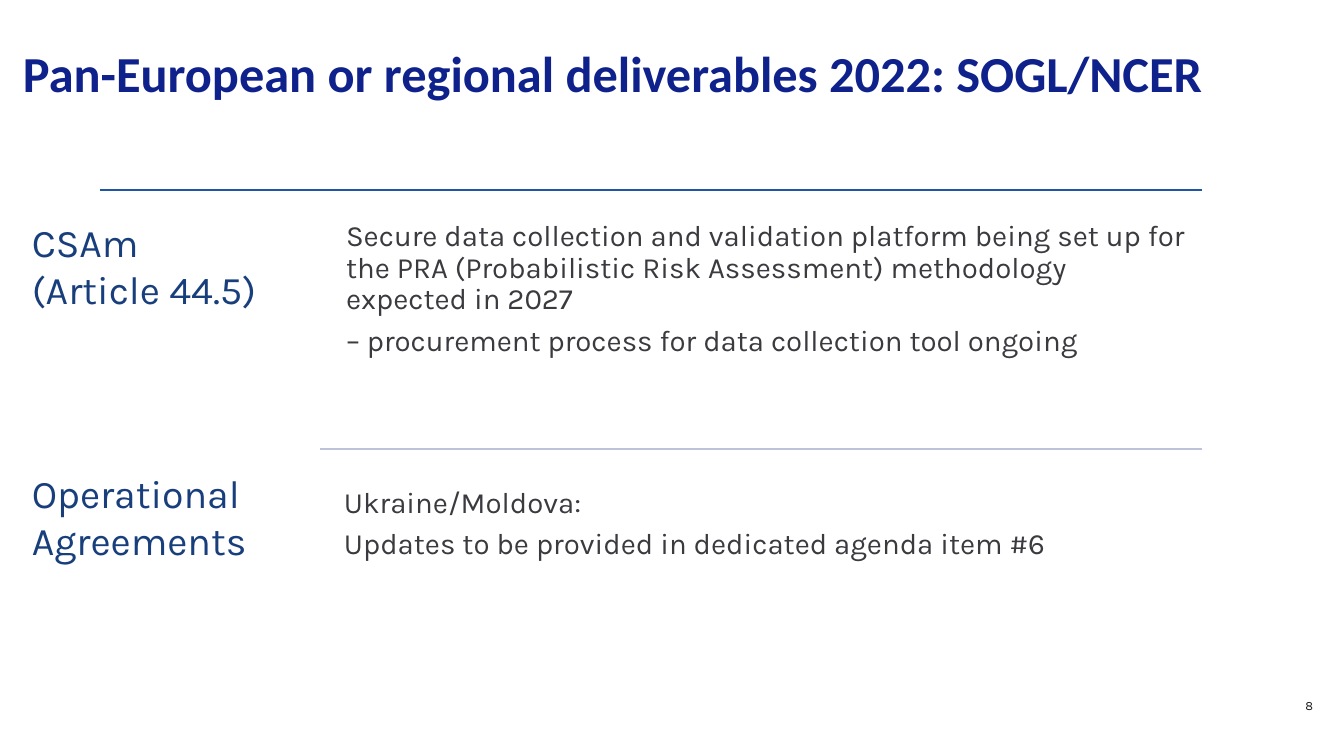
from lxml import etree
from pptx import Presentation, util as u
from pptx.dml.color import RGBColor
from pptx.enum import shapes, text
from pptx.oxml.ns import qn

PX = 914400 / 100.8
INK = {"title": "0F218B", "blue": "2054A5", "pale": "BDC3D8",
       "side": "183F7C", "body": "3A3A3F", "page": "1D1D20"}

deck = Presentation()
deck.slide_width, deck.slide_height = round(1344 * PX), round(756 * PX)
slide = deck.slides.add_slide(deck.slide_layouts[6])


def write(box, lines, size, ink, font="Karla", bold=False, pitch=None, gap=None, inset=None):
    shape = slide.shapes.add_textbox(*[round(v * PX) for v in box])
    frame = shape.text_frame
    frame.word_wrap = True
    if inset:
        frame.margin_left = frame.margin_right = round(inset * PX)
        frame.margin_top = frame.margin_bottom = round(inset * PX)
    for i, line in enumerate(lines):
        para = frame.add_paragraph() if i else frame.paragraphs[0]
        para.line_spacing = pitch
        para.space_after = gap
        run = para.add_run()
        run.text = line
        run.font.name = font
        run.font.size = u.Pt(size)
        run.font.bold = bold
        run.font.color.rgb = RGBColor.from_string(INK[ink])
    return frame


def rule(left, top, ink):
    line = slide.shapes.add_connector(
        shapes.MSO_CONNECTOR.STRAIGHT,
        *[round(v * PX) for v in (left, top, 1202, top)])
    line.line.color.rgb = RGBColor.from_string(INK[ink])
    line.line.width = u.Pt(1)
    etree.SubElement(line._element.spPr, qn("a:effectLst"))


page = write((680, 687, 643, 40), ["8"], 9, "page", pitch=u.Pt(9))
page.vertical_anchor = text.MSO_ANCHOR.MIDDLE
page.paragraphs[0].alignment = text.PP_ALIGN.RIGHT

write((13, 44, 1379, 146), ["Pan-European or regional deliverables 2022: SOGL/NCER"],
      36, "title", font="Calibri", bold=True, pitch=0.9)

rows = [
    (100, 190, "blue", (22, 213, 292, 105), ["CSAm", "(Article 44.5)"], (337, 212),
     ["Secure data collection and validation platform being set up for the PRA "
      "(Probabilistic Risk Assessment) methodology expected in 2027",
      "– procurement process for data collection tool ongoing"]),
    (320, 449, "pale", (22, 464, 250, 105), ["Operational Agreements"], (335, 479),
     ["Ukraine/Moldova:", "Updates to be provided in dedicated agenda item #6"]),
]
for left, top, ink, side, label, spot, body in rows:
    rule(left, top, ink)
    write(side, label, 28, "side")
    write((*spot, 865, 277), body, 21, "body", pitch=0.9, gap=u.Pt(7), inset=9)

deck.save("out.pptx")
